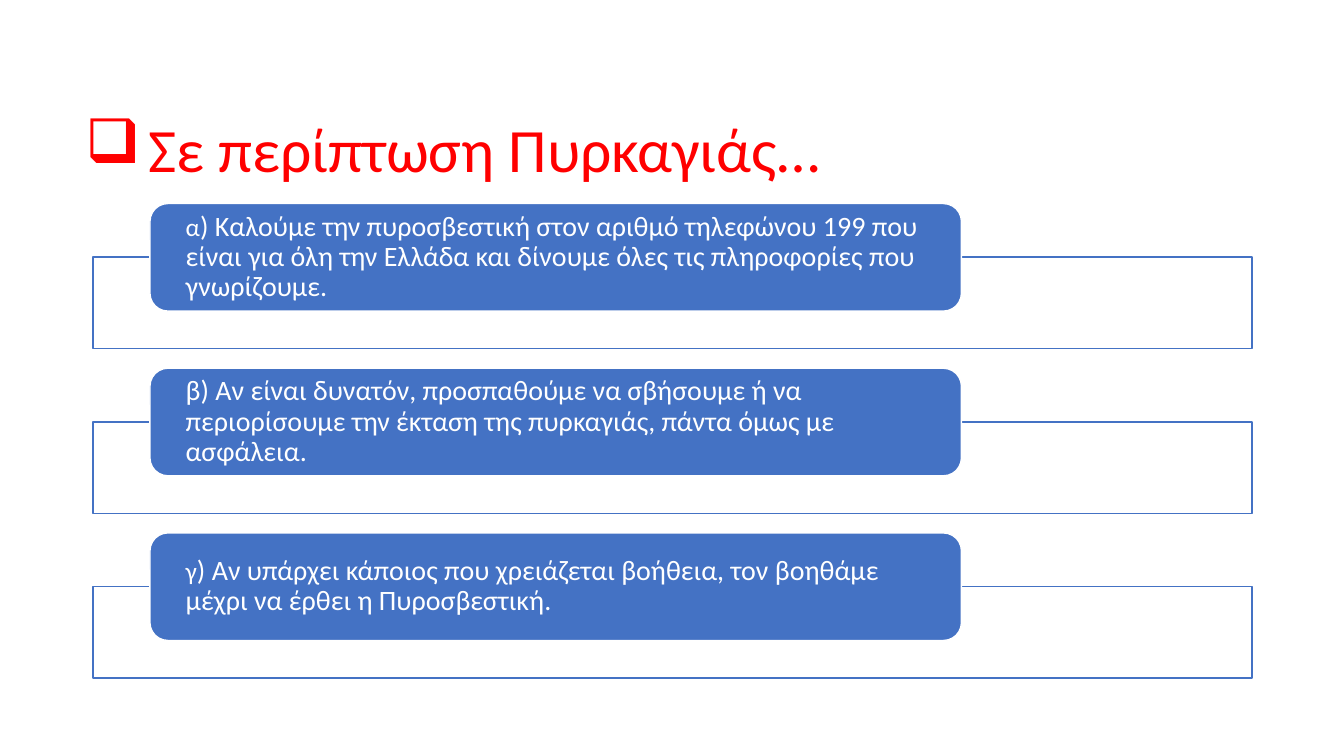
from lxml import etree
from pptx import Presentation
from pptx.dml.color import RGBColor
from pptx.enum.shapes import MSO_SHAPE
from pptx.enum.text import MSO_ANCHOR, MSO_AUTO_SIZE, PP_ALIGN
from pptx.oxml.ns import qn
from pptx.util import Cm, Pt

RECTANGLE = MSO_SHAPE.RECTANGLE
ROUNDED = MSO_SHAPE.ROUNDED_RECTANGLE
MIDDLE = MSO_ANCHOR.MIDDLE
NO_AUTOFIT = MSO_AUTO_SIZE.NONE
LEFT = PP_ALIGN.LEFT

RED = RGBColor(0xFF, 0x00, 0x00)
BLUE = RGBColor(0x44, 0x72, 0xC4)
WHITE = RGBColor(0xFF, 0xFF, 0xFF)
FONT = "Calibri"

TITLE = "Σε περίπτωση Πυρκαγιάς…"
# Each step is a list of (text, size in points)
STEPS = [
    [("α", 18), (") Καλούμε την πυροσβεστική στον αριθμό τηλεφώνου 199 που είναι "
                 "για όλη την Ελλάδα και δίνουμε όλες τις πληροφορίες που γνωρίζουμε.", 20)],
    [("β) Αν είναι δυνατόν, προσπαθούμε να σβήσουμε ή να περιορίσουμε την "
      "έκταση της πυρκαγιάς, πάντα όμως με ασφάλεια.", 20)],
    [("γ", 18), (") Αν υπάρχει κάποιος που χρειάζεται βοήθεια, τον βοηθάμε "
                 "μέχρι να έρθει η Πυροσβεστική.", 20)],
]
FIRST_FRAME_TOP = 6.48
FIRST_LABEL_TOP = 5.13
STEP_PITCH = 4.15


def add_text(paragraph, text, size, color):
    paragraph.alignment = LEFT
    paragraph.line_spacing = 0.9
    run = paragraph.add_run()
    run.text = text
    run.font.name = FONT
    run.font.size = Pt(size)
    run.font.color.rgb = color


def add_box(slide, kind, left, top, width, height, fill, line):
    shape = slide.shapes.add_shape(kind, Cm(left), Cm(top), Cm(width), Cm(height))
    shape.shadow.inherit = False
    shape.fill.solid()
    shape.fill.fore_color.rgb = fill
    shape.line.color.rgb = line
    shape.line.width = Pt(1)
    return shape


def set_opacity(shape, percent):
    color = shape.fill._xPr.find(qn("a:solidFill"))[0]
    etree.SubElement(color, qn("a:alpha"), val=str(percent * 1000))


def set_bullet(paragraph, character, indent):
    properties = paragraph._p.get_or_add_pPr()
    properties.set("marL", str(indent))
    properties.set("indent", str(-indent))
    etree.SubElement(properties, qn("a:buChar"), char=character)


def fill_title(slide):
    title = slide.shapes.title
    title.left, title.top, title.width, title.height = Cm(1.9), Cm(2.06), Cm(23.93), Cm(3.58)
    frame = title.text_frame
    frame.auto_size = NO_AUTOFIT
    frame.vertical_anchor = MIDDLE
    paragraph = frame.paragraphs[0]
    add_text(paragraph, TITLE, 44, RED)
    set_bullet(paragraph, "❑", Cm(1.58))


def add_step(slide, index, parts):
    offset = index * STEP_PITCH
    # Outlined frame behind the label
    frame_box = add_box(slide, RECTANGLE, 2.34, FIRST_FRAME_TOP + offset, 29.21, 2.31, WHITE, BLUE)
    set_opacity(frame_box, 90)
    # Label with the instruction
    label = add_box(slide, ROUNDED, 3.78, FIRST_LABEL_TOP + offset, 20.45, 2.71, BLUE, WHITE)
    frame = label.text_frame
    frame.word_wrap = True
    frame.vertical_anchor = MIDDLE
    frame.margin_left = frame.margin_right = Cm(0.77)
    frame.margin_top = frame.margin_bottom = 0
    for text, size in parts:
        add_text(frame.paragraphs[0], text, size, WHITE)


def main():
    presentation = Presentation()
    presentation.slide_width, presentation.slide_height = Cm(33.87), Cm(19.05)
    slide = presentation.slides.add_slide(presentation.slide_layouts[5])
    fill_title(slide)
    for index, parts in enumerate(STEPS):
        add_step(slide, index, parts)
    presentation.save("out.pptx")


if __name__ == "__main__":
    main()
